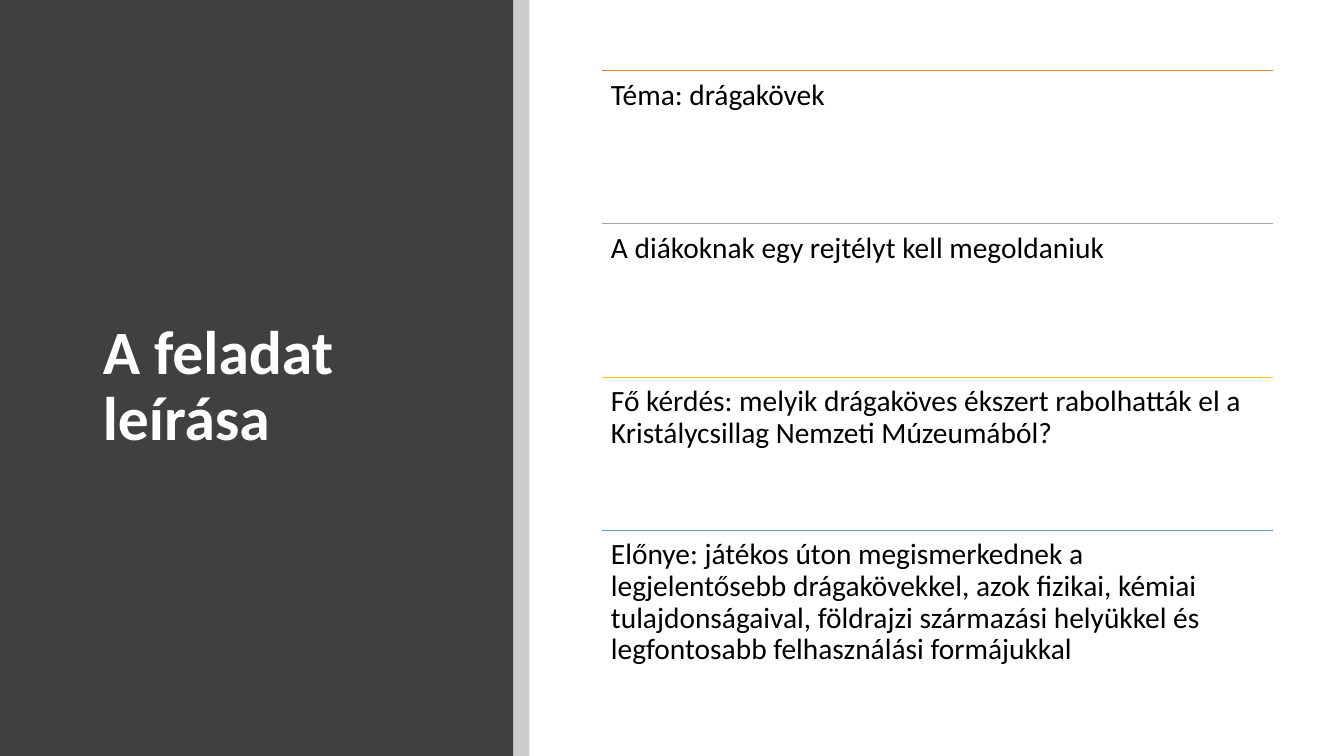
from lxml import etree
from pptx import Presentation
from pptx import util as u
from pptx.dml.color import RGBColor
from pptx.enum import shapes, text
from pptx.oxml.ns import qn

FONT = "Calibri"
PANEL, STRIPE, WHITE, BLACK = "404040", "000000", "FFFFFF", "000000"
LEFT, TOP, WIDTH, STEP = 5.97, 0.7, 6.66, 1.52
ITEMS = [
    ("ED7D31", "Téma: drágakövek"),
    ("A5A5A5", "A diákoknak egy rejtélyt kell megoldaniuk"),
    ("FFC000", "Fő kérdés: melyik drágaköves ékszert rabolhatták el a "
               "Kristálycsillag Nemzeti Múzeumából?"),
    ("5B9BD5", "Előnye: játékos úton megismerkednek a legjelentősebb "
               "drágakövekkel, azok fizikai, kémiai tulajdonságaival, "
               "földrajzi származási helyükkel és legfontosabb "
               "felhasználási formájukkal"),
]


def paint(color):
    return RGBColor.from_string(color)


def inches(*sizes):
    return [u.Inches(size) for size in sizes]


class Page:
    def __init__(self, slide, font):
        self.slide = slide
        self.font = font

    def fill_text(self, frame, words, size, color, bold=False):
        frame.word_wrap = True
        frame.auto_size = text.MSO_AUTO_SIZE.NONE
        para = frame.paragraphs[0]
        para.alignment = text.PP_ALIGN.LEFT
        para.line_spacing = 0.9
        run = para.add_run()
        run.text = words
        run.font.name = self.font
        run.font.size = u.Pt(size)
        run.font.bold = bold
        run.font.color.rgb = paint(color)

    def block(self, box, color, alpha=100):
        shape = self.slide.shapes.add_shape(
            shapes.MSO_SHAPE.RECTANGLE, *inches(*box))
        shape.shadow.inherit = False
        shape.line.fill.background()
        shape.fill.solid()
        shape.fill.fore_color.rgb = paint(color)
        if alpha < 100:
            tint = shape._element.spPr.find(".//" + qn("a:srgbClr"))
            etree.SubElement(tint, qn("a:alpha"), val=str(alpha * 1000))

    def title(self, box, words):
        title = self.slide.shapes.title
        title.left, title.top, title.width, title.height = inches(*box)
        title.text_frame.vertical_anchor = text.MSO_ANCHOR.MIDDLE
        self.fill_text(title.text_frame, words, 44, WHITE, True)
        self.slide.shapes._spTree.append(title._element)

    def rule(self, left, top, width, color):
        line = self.slide.shapes.add_connector(
            shapes.MSO_CONNECTOR.STRAIGHT,
            *inches(left, top, left + width, top))
        line.line.color.rgb = paint(color)
        line.line.width = u.Pt(0.5)
        etree.SubElement(line._element.spPr, qn("a:effectLst"))

    def note(self, box, words):
        frame = self.slide.shapes.add_textbox(*inches(*box)).text_frame
        frame.margin_left = frame.margin_right = u.Inches(0.09)
        frame.margin_top = frame.margin_bottom = u.Inches(0.09)
        frame.vertical_anchor = text.MSO_ANCHOR.TOP
        self.fill_text(frame, words, 21, BLACK)


def main():
    deck = Presentation()
    deck.slide_width, deck.slide_height = inches(13.33, 7.5)
    page = Page(deck.slides.add_slide(deck.slide_layouts[5]), FONT)
    page.block((0, 0, 5.09, 7.5), PANEL)
    page.block((5.09, 0, 0.16, 7.5), STRIPE, 20)
    page.title((0.92, 0.89, 3.65, 5.91), "A feladat leírása")
    for row, (color, words) in enumerate(ITEMS):
        top = TOP + row * STEP
        page.rule(LEFT, top, WIDTH, color)
        page.note((LEFT, top, WIDTH, STEP), words)
    deck.save("out.pptx")


if __name__ == "__main__":
    main()
